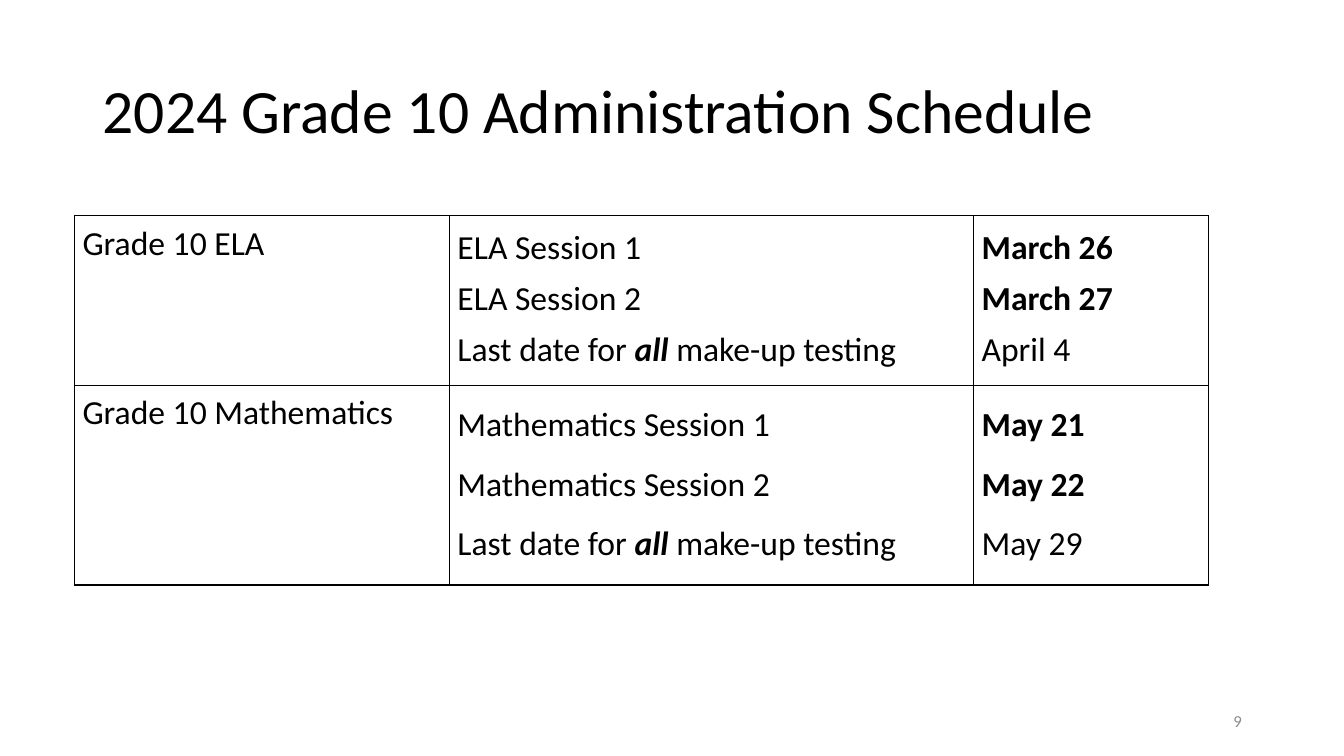
"""Build the slide with the 2024 Grade 10 administration schedule."""
from dataclasses import dataclass

from lxml import etree
from pptx import Presentation
from pptx.dml.color import RGBColor
from pptx.enum.text import MSO_ANCHOR, PP_ALIGN
from pptx.oxml.ns import qn
from pptx.util import Cm, Pt

MIDDLE = MSO_ANCHOR.MIDDLE
LEFT, RIGHT = PP_ALIGN.LEFT, PP_ALIGN.RIGHT


@dataclass(frozen=True)
class Theme:
    font: str = "Calibri"
    ink: str = "000000"
    muted: str = "8C8C8C"
    paper: str = "FFFFFF"
    title_size: int = 44
    table_size: int = 24
    number_size: int = 12
    border_width: int = 1


theme = Theme()


def write_lines(frame, lines, size, color, spacing, alignment=LEFT):
    for index, runs in enumerate(lines):
        paragraph = frame.paragraphs[0] if index == 0 else frame.add_paragraph()
        paragraph.line_spacing = spacing
        paragraph.alignment = alignment
        for text, styles in runs:
            run = paragraph.add_run()
            run.text = text
            run.font.color.rgb = RGBColor.from_string(color)
            font_format = {"name": theme.font, "size": Pt(size),
                           "bold": "b" in styles, "italic": "i" in styles}
            for name, value in font_format.items():
                setattr(run.font, name, value)


def add_borders(cell):
    properties = cell._tc.get_or_add_tcPr()
    for position, side in enumerate(("lnL", "lnR", "lnT", "lnB")):
        line = etree.Element(qn(f"a:{side}"), w=str(Pt(theme.border_width)))
        fill = etree.SubElement(line, qn("a:solidFill"))
        etree.SubElement(fill, qn("a:srgbClr"), val=theme.ink)
        properties.insert(position, line)


presentation = Presentation()
presentation.slide_width = Cm(33.87)
presentation.slide_height = Cm(19.05)
slide = presentation.slides.add_slide(presentation.slide_layouts[6])

text_boxes = [
    ("2024 Grade 10 Administration Schedule", (2.34, 1.02, 29.21, 3.68),
     theme.title_size, theme.ink, 0.9, LEFT),
    ("9", (23.93, 17.65, 7.62, 1.02),
     theme.number_size, theme.muted, 1.0, RIGHT),
]
for text, box, size, color, spacing, alignment in text_boxes:
    shape = slide.shapes.add_textbox(*map(Cm, box))
    shape.text_frame.word_wrap = True
    shape.text_frame.vertical_anchor = MIDDLE
    write_lines(shape.text_frame, [[(text, "")]], size, color, spacing, alignment)

column_widths = [9.45, 13.21, 5.92]
row_heights = [4.27, 5.03]
subject_spacing = 1.15
make_up_line = [("Last date for ", ""), ("all ", "bi"), ("make-up testing", "")]
schedule = [
    ("Grade 10 ELA", "ELA", ("March 26", "March 27", "April 4"), 1.25),
    ("Grade 10 Mathematics", "Mathematics", ("May 21", "May 22", "May 29"), 1.45),
]

table = slide.shapes.add_table(
    len(row_heights), len(column_widths), Cm(1.88), Cm(5.44),
    Cm(sum(column_widths)), Cm(sum(row_heights))).table
table.first_row = False
table.horz_banding = False
for column, width in zip(table.columns, column_widths):
    column.width = Cm(width)
for row, height in zip(table.rows, row_heights):
    row.height = Cm(height)

cell_format = {"margin_left": Cm(0.2), "margin_right": Cm(0.2),
               "margin_top": Cm(0.03), "margin_bottom": Cm(0.03)}
for row, (grade, subject, dates, spacing) in zip(table.rows, schedule):
    sessions = [[(f"{subject} Session {number}", "")] for number in (1, 2)]
    columns = [
        ([[(grade, "")]], subject_spacing),
        (sessions + [make_up_line], spacing),
        ([[(date, style)] for date, style in zip(dates, ("b", "b", ""))], spacing),
    ]
    for cell, (lines, line_spacing) in zip(row.cells, columns):
        for name, value in cell_format.items():
            setattr(cell, name, value)
        cell.fill.solid()
        cell.fill.fore_color.rgb = RGBColor.from_string(theme.paper)
        add_borders(cell)
        write_lines(cell.text_frame, lines, theme.table_size, theme.ink, line_spacing)

presentation.save("out.pptx")
